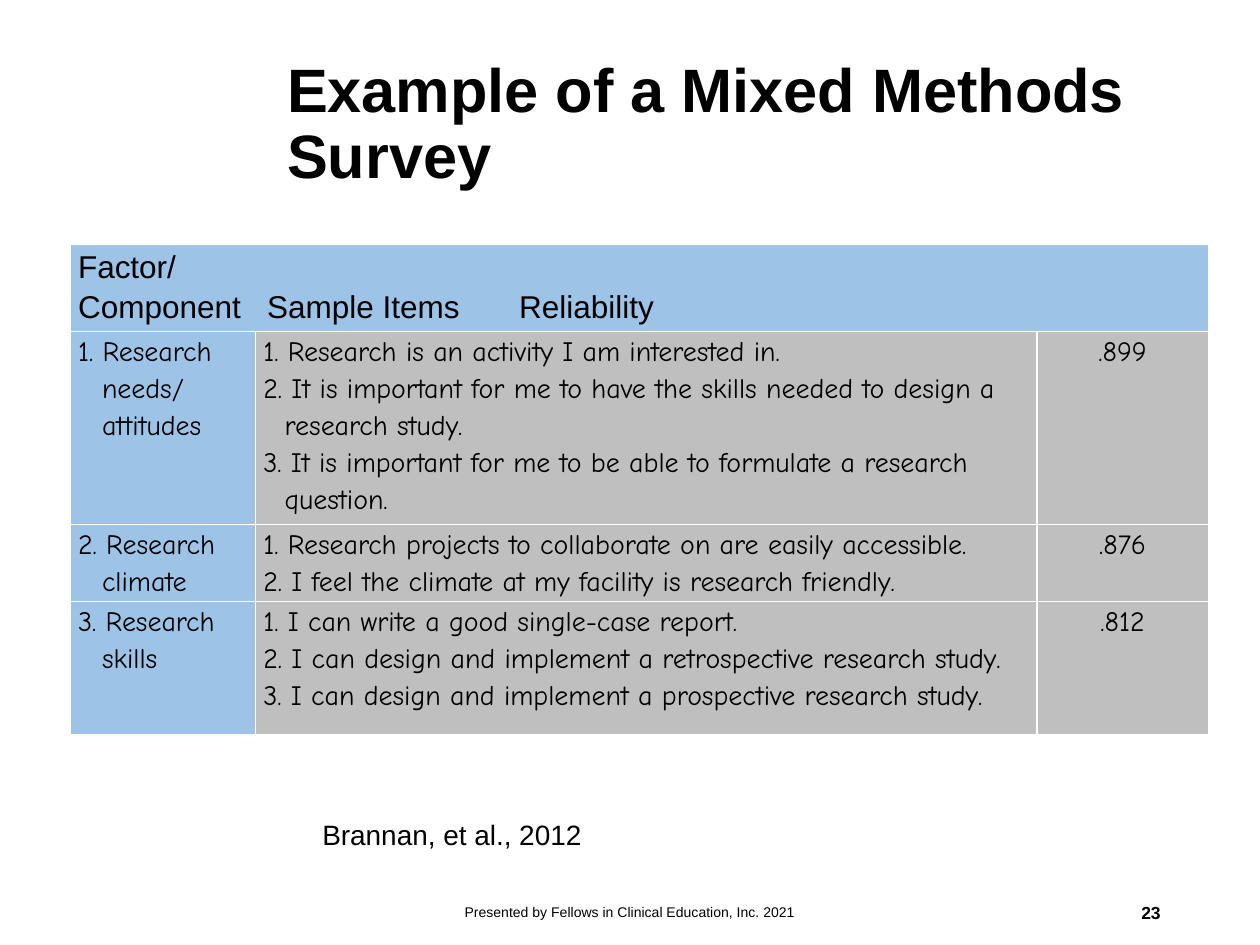
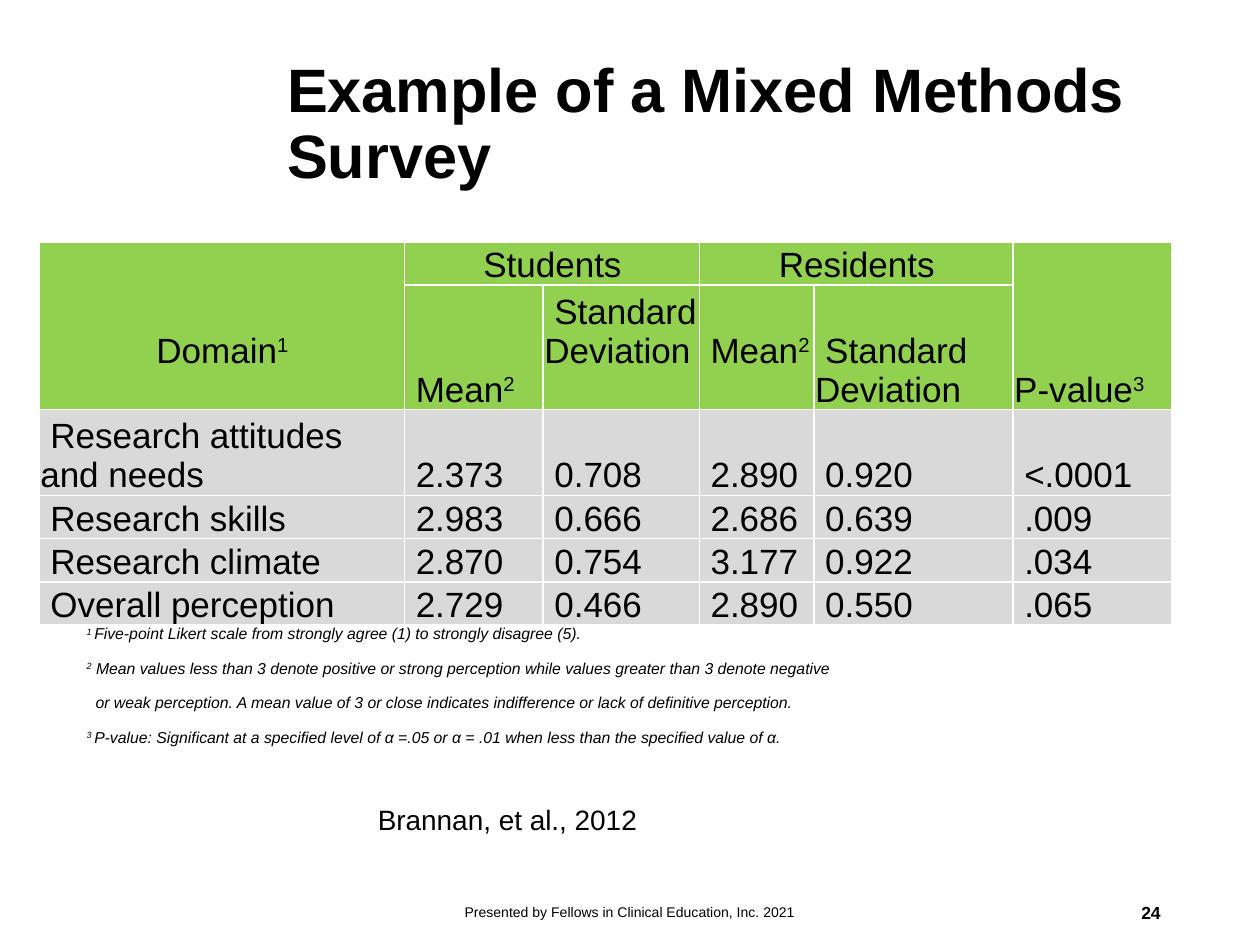
from dataclasses import dataclass

from lxml.etree import SubElement
from pptx import Presentation
from pptx.dml.color import RGBColor
from pptx.enum.text import MSO_ANCHOR, PP_ALIGN
from pptx.oxml.ns import qn
from pptx.util import Inches, Pt


@dataclass(frozen=True)
class Theme:
    ink: str = "000000"
    paper: str = "FFFFFF"
    blue: str = "9DC3E6"
    green: str = "92D050"
    mid_gray: str = "BFBFBF"
    light_gray: str = "D9D9D9"
    font: str = "Arial"
    hand_font: str = "Comic Neue"
    title_size: int = 35
    statistics_size: int = 20
    heading_size: int = 18
    body_size: int = 16
    number_size: int = 10
    note_size: int = 9
    footer_size: int = 8
    border_width: int = 1


@dataclass(frozen=True)
class Style:
    """Paragraph style; margin and indent are inches, tabs are inches from the text edge."""
    size: int
    font: str = Theme.font
    bold: bool = False
    italic: bool = False
    align: PP_ALIGN = PP_ALIGN.LEFT
    spacing: float = 1.0
    before: int = 0
    margin: float = 0
    indent: float = 0
    tabs: tuple = ()


@dataclass(frozen=True)
class CellLook:
    """Fill, text style and padding (left, top, right, bottom in inches) of a table cell."""
    fill: str
    style: Style
    padding: tuple
    anchor: MSO_ANCHOR = MSO_ANCHOR.TOP


class Deck:
    """Holds the theme and the current slide; lengths are in a grid of 100 columns by 75 rows."""
    COLUMNS, ROWS = 100, 75

    def __init__(self, theme):
        self.theme = theme
        self.presentation = Presentation()
        self.presentation.slide_width = Inches(10)
        self.presentation.slide_height = Inches(7.5)
        self.slide = None

    def across(self, columns):
        return round(self.presentation.slide_width * columns / self.COLUMNS)

    def down(self, rows):
        return round(self.presentation.slide_height * rows / self.ROWS)

    def start_slide(self, title, footer, number):
        theme = self.theme
        self.slide = self.presentation.slides.add_slide(self.presentation.slide_layouts[6])
        self.text((21.8, 2.7, 71.4, 14.5), [title],
                  Style(theme.title_size, bold=True, spacing=0.9), MSO_ANCHOR.MIDDLE)
        self.text((33.1, 70.4, 33.8, 4), [footer],
                  Style(theme.footer_size, align=PP_ALIGN.CENTER), MSO_ANCHOR.MIDDLE)
        self.text((70.6, 70.4, 22.5, 4), [str(number)],
                  Style(theme.number_size, bold=True, align=PP_ALIGN.RIGHT), MSO_ANCHOR.MIDDLE)

    def text(self, box, lines, style, anchor=MSO_ANCHOR.TOP):
        left, top, width, height = box
        shape = self.slide.shapes.add_textbox(
            self.across(left), self.down(top), self.across(width), self.down(height))
        shape.text_frame.word_wrap = True
        shape.text_frame.vertical_anchor = anchor
        self.fill_frame(shape.text_frame, lines, style)

    def fill_frame(self, frame, lines, style):
        """Fill a frame; a line is a text or a (text, style) pair, with ^ around superscripts."""
        for position, line in enumerate(lines):
            text, line_style = (line, style) if isinstance(line, str) else line
            paragraph = frame.add_paragraph() if position else frame.paragraphs[0]
            self.format_paragraph(paragraph, line_style)
            if position and line_style.before:
                paragraph.space_before = Pt(line_style.before)
            for part, words in enumerate(text.split("^")):
                if words:
                    self.run(paragraph, words, line_style, superscript=part % 2 == 1)

    def format_paragraph(self, paragraph, style):
        properties = paragraph._p.get_or_add_pPr()
        properties.set("marL", str(Inches(style.margin)))
        properties.set("indent", str(Inches(style.indent)))
        if style.tabs:
            tab_list = SubElement(properties, qn("a:tabLst"))
            for stop in style.tabs:
                SubElement(tab_list, qn("a:tab"), pos=str(Inches(stop)), algn="l")
        paragraph.alignment = style.align
        paragraph.line_spacing = style.spacing

    def run(self, paragraph, words, style, superscript):
        run = paragraph.add_run()
        run.text = words
        run.font.name = style.font
        run.font.size = Pt(style.size)
        run.font.bold = style.bold
        run.font.italic = style.italic
        run.font.color.rgb = RGBColor.from_string(self.theme.ink)
        if superscript:
            run._r.get_or_add_rPr().set("baseline", "30000")

    def table(self, corner, widths, heights, rows, spans=()):
        """Rows hold (lines, look) pairs; spans hold (row, column, last row, last column)."""
        left, top = corner
        table = self.slide.shapes.add_table(
            len(heights), len(widths), self.across(left), self.down(top),
            self.across(sum(widths)), self.down(sum(heights))).table
        table.first_row = table.horz_banding = False
        for column, width in zip(table.columns, widths):
            column.width = self.across(width)
        for row, height in zip(table.rows, heights):
            row.height = self.down(height)
        for row, entries in enumerate(rows):
            for column, (lines, look) in enumerate(entries):
                self.cell(table.cell(row, column), lines, look)
        for row, column, last_row, last_column in spans:
            table.cell(row, column).merge(table.cell(last_row, last_column))

    def cell(self, cell, lines, look):
        properties = cell._tc.get_or_add_tcPr()
        for side in ("a:lnL", "a:lnR", "a:lnT", "a:lnB"):
            border = SubElement(properties, qn(side), w=str(Pt(self.theme.border_width)))
            SubElement(SubElement(border, qn("a:solidFill")), qn("a:srgbClr"), val=self.theme.paper)
        cell.fill.solid()
        cell.fill.fore_color.rgb = RGBColor.from_string(look.fill)
        (cell.margin_left, cell.margin_top,
         cell.margin_right, cell.margin_bottom) = map(Inches, look.padding)
        cell.vertical_anchor = look.anchor
        self.fill_frame(cell.text_frame, lines, look.style)


TITLE = "Example of a Mixed Methods Survey"
FOOTER = "Presented by Fellows in Clinical Education, Inc. 2021"
CITATION = "Brannan, et al., 2012"


def add_factor_slide(deck):
    theme = deck.theme
    deck.start_slide(TITLE, FOOTER, 23)
    padding = (0.06, 0, 0.06, 0)

    def look(fill, **options):
        style = Style(theme.body_size, theme.hand_font, spacing=1.15, **options)
        return CellLook(fill, style, padding)

    heading = CellLook(theme.blue, Style(theme.heading_size, spacing=1.15, tabs=(3.16, 7.53)), padding)
    factor = look(theme.blue, margin=0.19, indent=-0.19)
    continued = look(theme.blue, margin=0.19).style
    items = look(theme.mid_gray, margin=0.17, indent=-0.17)
    reliability = look(theme.mid_gray, align=PP_ALIGN.CENTER)
    factors = [
        (["1. Research needs/", ("attitudes", continued)],
         ["1. Research is an activity I am interested in.",
          "2. It is important for me to have the skills needed to design a research study.",
          "3. It is important for me to be able to formulate a research question."],
         [".899"]),
        (["2. Research climate"],
         ["1. Research projects to collaborate on are easily accessible.",
          "2. I feel the climate at my facility is research friendly."],
         [".876"]),
        (["3. Research skills"],
         ["1. I can write a good single-case report.",
          "2. I can design and implement a retrospective research study.",
          "3. I can design and implement a prospective research study."],
         [".812"]),
    ]
    header = [(["Factor/", "Component\tSample Items\tReliability"], heading),
              ([], heading), ([], heading)]
    rows = [header] + [list(zip(entry, (factor, items, reliability))) for entry in factors]
    deck.table((5.6, 19.4), (14.7, 62, 13.6), (6.3, 14.6, 5.8, 10.6), rows, [(0, 0, 0, 2)])
    deck.text((24.6, 64.4, 50, 3.7), [CITATION], Style(theme.body_size))


def add_statistics_slide(deck):
    theme = deck.theme
    deck.start_slide(TITLE, FOOTER, 24)

    def look(fill, bottom=0.0, **options):
        style = Style(theme.statistics_size, **options)
        return CellLook(fill, style, (0.01, 0.01, 0, bottom), MSO_ANCHOR.BOTTOM)

    line_height = 0.31
    first_line = 0.08
    plain = look(theme.green)
    centered = look(theme.green, align=PP_ALIGN.CENTER)
    domain = look(theme.green, line_height, align=PP_ALIGN.CENTER)
    indented = look(theme.green, indent=first_line)
    raised = look(theme.green, line_height, indent=first_line)
    value = look(theme.light_gray, indent=first_line)
    blank = ([], plain)

    groups = [(["Domain^1^"], domain), (["Students"], centered), blank,
              (["Residents"], centered), blank, (["P-value^3^"], plain)]
    measures = [blank, (["Mean^2^"], indented), (["Standard Deviation"], raised),
                (["Mean^2^"], raised), (["Standard Deviation"], indented), blank]
    results = [
        ("Research attitudes and needs", "2.373", "0.708", "2.890", "0.920", "<.0001"),
        ("Research skills", "2.983", "0.666", "2.686", "0.639", ".009"),
        ("Research climate", "2.870", "0.754", "3.177", "0.922", ".034"),
        ("Overall perception", "2.729", "0.466", "2.890", "0.550", ".065"),
    ]
    rows = [groups, measures] + [[([text], value) for text in result] for result in results]

    note = Style(theme.note_size, italic=True, spacing=0.9, before=10)
    continued = Style(theme.note_size, italic=True, spacing=0.9, before=10, margin=0.07)
    deck.text((5.9, 49.2, 90, 6.3), [
        "^1 ^Five-point Likert scale from strongly agree (1) to strongly disagree (5).",
        "^2^ Mean values less than 3 denote positive or strong perception"
        " while values greater than 3 denote negative",
        ("or weak perception. A mean value of 3 or close indicates indifference"
         " or lack of definitive perception.", continued),
        "^3 ^P-value: Significant at a specified level of α =.05 or α = .01"
        " when less than the specified value of α.",
    ], note)
    deck.table((3.1, 19.2), (29, 11, 12.4, 9.1, 15.8, 12.6), (3.4, 9.4, 6.8, 3.4, 3.4, 3.4), rows,
               [(0, 0, 1, 0), (0, 1, 0, 2), (0, 3, 0, 4), (0, 5, 1, 5)])
    deck.text((29, 63.2, 50, 3.7), [CITATION], Style(theme.body_size))


def main():
    deck = Deck(Theme())
    add_factor_slide(deck)
    add_statistics_slide(deck)
    deck.presentation.save("out.pptx")


if __name__ == "__main__":
    main()
